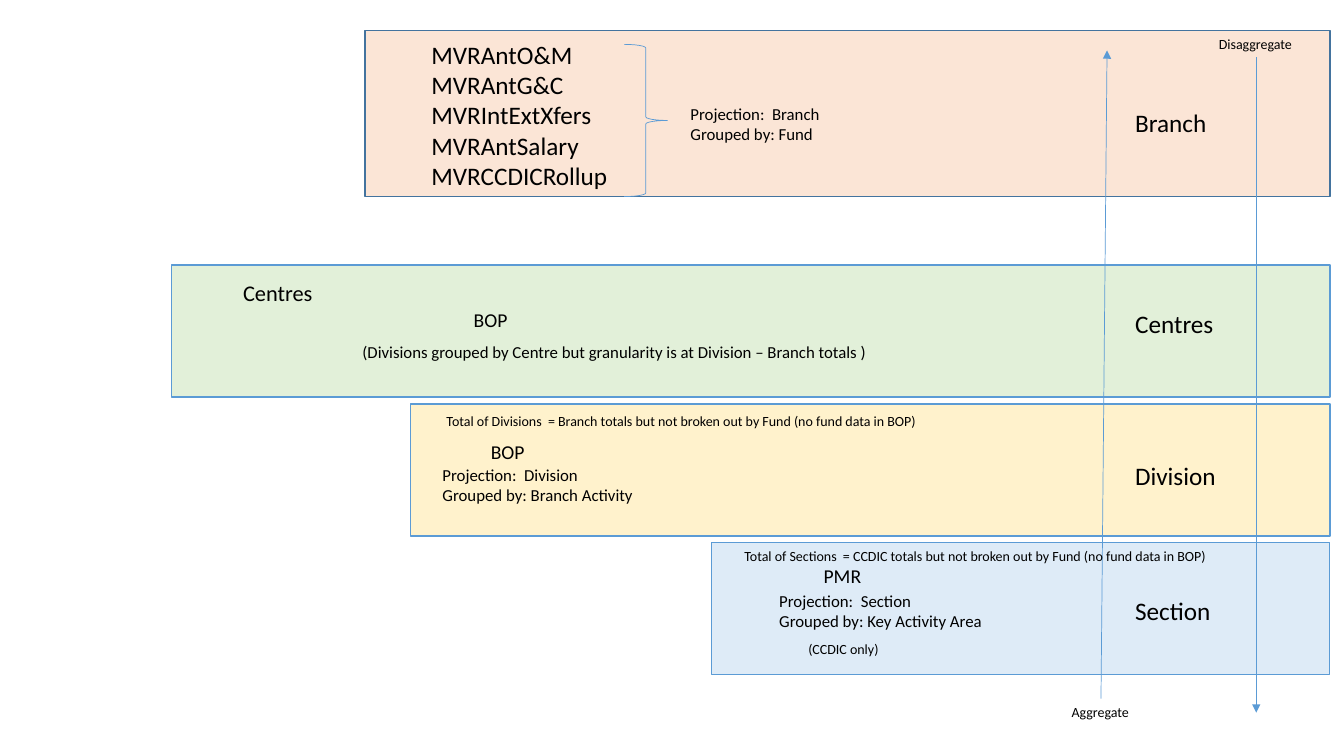
from dataclasses import dataclass

from lxml import etree
from pptx import Presentation
from pptx import util as u
from pptx.dml.color import RGBColor
from pptx.enum import shapes, text
from pptx.oxml.ns import qn

PX = 9144


@dataclass(frozen=True)
class Theme:
    font: str = "Calibri"
    ink: str = "000000"
    line: str = "5B9BD5"
    branch_line: str = "43739E"
    branch: str = "FBE5D6"
    centres: str = "E2F0D9"
    division: str = "FFF2CC"
    section: str = "DEEBF7"
    heading: int = 18
    subheading: int = 16
    system: int = 14
    detail: int = 12
    note: int = 10


THEME = Theme()
BANDS_RIGHT = 1319
LEVEL_LEFT = 1116


def px(*lengths):
    return [u.Emu(length * PX) for length in lengths]


def style_line(shape, color, width):
    shape.line.color.rgb = RGBColor.from_string(color)
    shape.line.width = u.Pt(width)


def add_band(slide, left, top, height, fill, line=THEME.line):
    band = slide.shapes.add_shape(
        shapes.MSO_SHAPE.RECTANGLE, *px(left, top, BANDS_RIGHT - left, height)
    )
    band.shadow.inherit = False
    band.fill.solid()
    band.fill.fore_color.rgb = RGBColor.from_string(fill)
    style_line(band, line, 1)


def add_brace(slide, left, top, width, height):
    brace = slide.shapes.add_shape(
        shapes.MSO_SHAPE.RIGHT_BRACE, *px(left, top, width, height)
    )
    brace.shadow.inherit = False
    brace.fill.background()
    style_line(brace, THEME.line, 0.5)


def add_arrow(slide, start, end):
    arrow = slide.shapes.add_connector(
        shapes.MSO_CONNECTOR.STRAIGHT, *px(*start, *end)
    )
    style_line(arrow, THEME.line, 0.5)
    etree.SubElement(arrow.line._get_or_add_ln(), qn("a:tailEnd"), type="triangle")
    etree.SubElement(arrow._element.spPr, qn("a:effectLst"))


def add_label(slide, box, lines, size, centred=False, wrap=False):
    label = slide.shapes.add_textbox(*px(*box))
    frame = label.text_frame
    frame.word_wrap = wrap
    frame.auto_size = text.MSO_AUTO_SIZE.SHAPE_TO_FIT_TEXT
    frame.text = "\n".join(lines)
    for paragraph in frame.paragraphs:
        paragraph.alignment = text.PP_ALIGN.CENTER if centred else text.PP_ALIGN.LEFT
        paragraph.font.name = THEME.font
        paragraph.font.size = u.Pt(size)
        paragraph.font.color.rgb = RGBColor.from_string(THEME.ink)


def add_bands(slide):
    add_band(slide, 362, 30, 165, THEME.branch, THEME.branch_line)
    add_band(slide, 170, 263, 131, THEME.centres)
    add_band(slide, 407, 401, 131, THEME.division)
    add_band(slide, 706, 538, 131, THEME.section)


def add_levels(slide):
    for name, top, width in (
        ("Branch", 102, 92),
        ("Centres", 301, 99),
        ("Division", 452, 101),
        ("Section", 586, 96),
    ):
        add_label(slide, (LEVEL_LEFT, top, width, 40), [name], THEME.heading)


def add_sources(slide):
    reports = ["MVRAntO&M", "MVRAntG&C", "MVRIntExtXfers", "MVRAntSalary", "MVRCCDICRollup"]
    add_label(slide, (418, 34, 201, 162), reports, THEME.heading, wrap=True)
    add_brace(slide, 619, 44, 43, 151)
    add_label(slide, (230, 272, 91, 37), ["Centres"], THEME.subheading, centred=True)
    for name, left, top, width in (
        ("BOP", 460, 301, 54),
        ("BOP", 477, 432, 57),
        ("PMR", 807, 555, 58),
    ):
        add_label(slide, (left, top, width, 34), [name], THEME.system)


def add_projections(slide):
    for level, group, left, top, width, height in (
        ("Branch", "Fund", 675, 98, 150, 71),
        ("Division", "Branch Activity", 429, 456, 211, 50),
        ("Section", "Key Activity Area", 763, 581, 223, 50),
    ):
        lines = [f"Projection:  {level}", f"Grouped by: {group}"]
        add_label(slide, (left, top, width, height), lines, THEME.detail)


def add_notes_on_totals(slide):
    granularity = "(Divisions grouped by Centre but granularity is at Division – Branch totals )"
    add_label(slide, (347, 334, 525, 30), [granularity], THEME.detail, centred=True)
    for parts, total, left, top, width in (
        ("Divisions", "Branch", 430, 404, 491),
        ("Sections", "CCDIC", 724, 538, 486),
    ):
        note = (
            f"Total of {parts}  = {total} totals but not broken out by Fund "
            "(no fund data in BOP)"
        )
        add_label(slide, (left, top, width, 27), [note], THEME.note, centred=True)
    add_label(slide, (791, 631, 91, 27), ["(CCDIC only)"], THEME.note, centred=True)


def add_directions(slide):
    add_arrow(slide, (1092, 693), (1098, 50))
    add_arrow(slide, (1246, 57), (1246, 707))
    add_label(slide, (1053, 693, 79, 27), ["Aggregate"], THEME.note)
    add_label(slide, (1199, 30, 94, 27), ["Disaggregate"], THEME.note, wrap=True)


def main():
    presentation = Presentation()
    presentation.slide_width, presentation.slide_height = px(1333, 750)
    slide = presentation.slides.add_slide(presentation.slide_layouts[6])
    add_bands(slide)
    add_directions(slide)
    add_levels(slide)
    add_sources(slide)
    add_projections(slide)
    add_notes_on_totals(slide)
    presentation.save("out.pptx")


if __name__ == "__main__":
    main()
